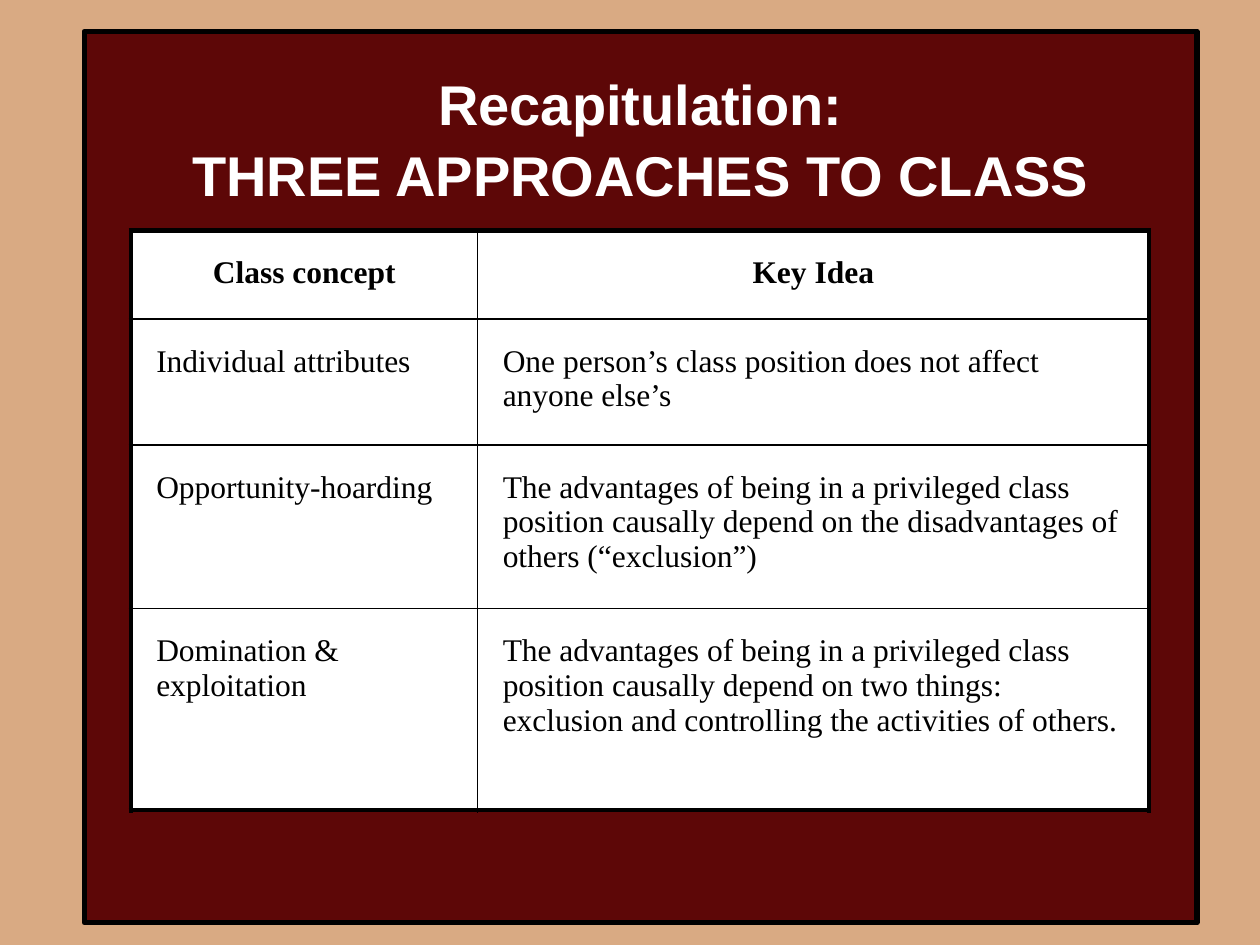
from lxml.etree import SubElement
from pptx import Presentation
from pptx.dml.color import RGBColor
from pptx.enum.shapes import MSO_SHAPE
from pptx.enum.text import MSO_ANCHOR, PP_ALIGN
from pptx.oxml.ns import qn
from pptx.util import Inches, Pt

SLIDE_WIDTH, SLIDE_HEIGHT = Inches(10), Inches(7.5)
SAND, MAROON, BLACK, WHITE = "D9AA83", "5D0707", "000000", "FFFFFF"
COLUMN_WIDTHS = [2.75, 5.33]
ROW_HEIGHTS = [0.7, 1, 1.3, 1.6]
HEADING = ["Recapitulation:", "THREE APPROACHES TO CLASS"]
APPROACHES = [
    ("Class concept", "Key Idea"),
    ("Individual attributes",
     "One person’s class position does not affect anyone else’s"),
    ("Opportunity-hoarding",
     "The advantages of being in a privileged class position causally depend "
     "on the disadvantages of others (“exclusion”)"),
    ("Domination & exploitation",
     "The advantages of being in a privileged class position causally depend "
     "on two things: exclusion and controlling the activities of others."),
]


def paint(fill, color):
    """Give a fill one solid colour from a hex string."""
    fill.solid()
    fill.fore_color.rgb = RGBColor.from_string(color)


def add_run(paragraph, words, font_name, size, color, bold, alignment):
    """Add one formatted run and align its paragraph."""
    paragraph.alignment = alignment
    run = paragraph.add_run()
    run.text = words
    run.font.name, run.font.size, run.font.bold = font_name, Pt(size), bold
    paint(run.font.fill, color)


def set_margins(holder, horizontal, vertical):
    """Set the text margins of a cell or text frame in inches."""
    holder.margin_left = holder.margin_right = Inches(horizontal)
    holder.margin_top = holder.margin_bottom = Inches(vertical)


def add_heading_panel(slide):
    """Add the framed panel with the heading at its top."""
    panel = slide.shapes.add_shape(
        MSO_SHAPE.RECTANGLE, int(SLIDE_WIDTH * 0.067), int(SLIDE_HEIGHT / 30),
        int(SLIDE_WIDTH * 0.883), int(SLIDE_HEIGHT * 0.943))
    panel.shadow.inherit = False
    paint(panel.fill, MAROON)
    paint(panel.line.fill, BLACK)
    panel.line.width = Pt(3.25)
    frame = panel.text_frame
    frame.word_wrap = True
    frame.vertical_anchor = MSO_ANCHOR.TOP
    set_margins(frame, 0.2, 0.3)
    for index, words in enumerate(HEADING):
        paragraph = frame.add_paragraph() if index else frame.paragraphs[0]
        paragraph.space_before = Pt(2.5)
        add_run(paragraph, words, "Arial", 32, WHITE, True, PP_ALIGN.CENTER)


def set_borders(cell, widths):
    """Draw the left, right, top and bottom borders with widths in points."""
    properties = cell._tc.get_or_add_tcPr()
    for position, (side, width) in enumerate(zip("LRTB", widths)):
        border = SubElement(properties, qn(f"a:ln{side}"), w=str(Pt(width)))
        fill = SubElement(border, qn("a:solidFill"))
        SubElement(fill, qn("a:srgbClr"), val=BLACK)
        properties.insert(position, border)


def add_approach_table(slide):
    """Add the table of class concepts with a heavy outer border."""
    row_count, column_count = len(ROW_HEIGHTS), len(COLUMN_WIDTHS)
    table = slide.shapes.add_table(
        row_count, column_count,
        int(SLIDE_WIDTH * 0.104), int(SLIDE_HEIGHT * 0.244),
        Inches(sum(COLUMN_WIDTHS)), Inches(sum(ROW_HEIGHTS))).table
    table.horz_banding = False
    for column, width in zip(table.columns, COLUMN_WIDTHS):
        column.width = Inches(width)
    for row_index, approach in enumerate(APPROACHES):
        table.rows[row_index].height = Inches(ROW_HEIGHTS[row_index])
        is_header = row_index == 0
        alignment = PP_ALIGN.CENTER if is_header else PP_ALIGN.LEFT
        for column_index, words in enumerate(approach):
            cell = table.cell(row_index, column_index)
            paint(cell.fill, WHITE)
            set_margins(cell, 0.2, 0.2)
            outer = (column_index == 0, column_index == column_count - 1,
                     is_header, row_index == row_count - 1)
            set_borders(cell, [3 if edge else 1 for edge in outer])
            add_run(cell.text_frame.paragraphs[0], words, "Times New Roman",
                    18, BLACK, is_header, alignment)


def main():
    """Build and save the slide."""
    presentation = Presentation()
    presentation.slide_width = SLIDE_WIDTH
    presentation.slide_height = SLIDE_HEIGHT
    slide = presentation.slides.add_slide(presentation.slide_layouts[6])
    paint(slide.background.fill, SAND)
    add_heading_panel(slide)
    add_approach_table(slide)
    presentation.save("out.pptx")


if __name__ == "__main__":
    main()
